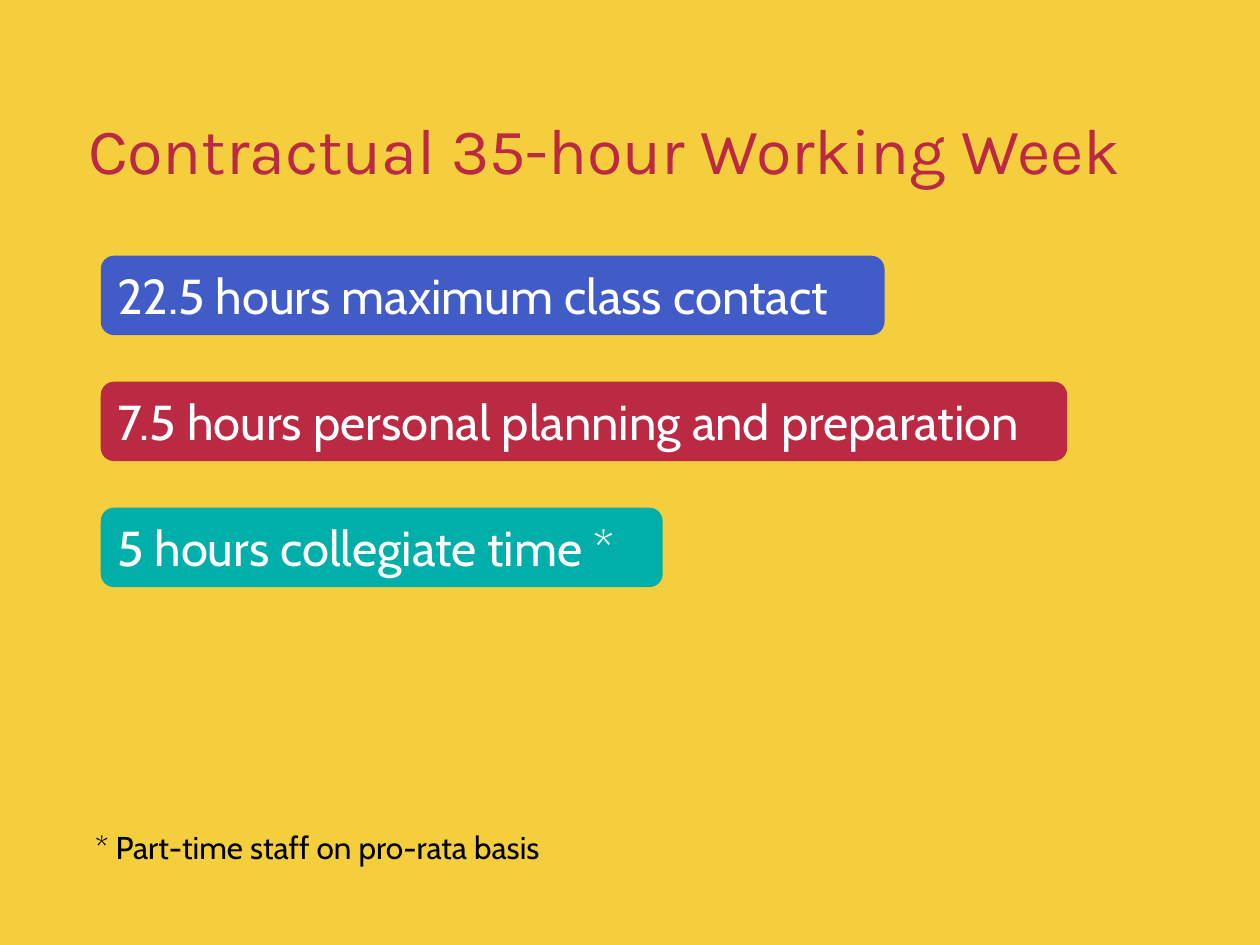
"""Build the slide on the contractual 35-hour working week."""
from pptx import Presentation
from pptx.dml.color import RGBColor
from pptx.enum.shapes import MSO_SHAPE as SHAPE
from pptx.enum.text import MSO_ANCHOR as ANCHOR, MSO_AUTO_SIZE as AUTO, PP_ALIGN as ALIGN
from pptx.util import Inches, Pt

YELLOW = RGBColor(0xF5, 0xCE, 0x3E)
RED = RGBColor(0xBB, 0x29, 0x43)
BLUE = RGBColor(0x42, 0x5C, 0xC7)
TEAL = RGBColor(0x00, 0xAF, 0xAA)
WHITE = RGBColor(0xFF, 0xFF, 0xFF)
BLACK = RGBColor(0x00, 0x00, 0x00)

MARGIN = 0.6
BAR_LEFT, BAR_TOP, BAR_HEIGHT, ROW_STEP = 0.8, 2.03, 0.63, 1
BARS = [
    ("22.5 hours maximum class contact", 6.22, BLUE),
    ("7.5 hours personal planning and preparation", 7.67, RED),
    ("5 hours collegiate time *", 4.46, TEAL),
]


def write(sp, text, font, size, color, anchor=ANCHOR.TOP):
    """Fill a shape with one left-aligned paragraph and return it."""
    tf = sp.text_frame
    tf.word_wrap = True
    tf.vertical_anchor = anchor
    p = tf.paragraphs[0]
    p.text = text
    p.alignment = ALIGN.LEFT
    p.font.name, p.font.size = font, Pt(size)
    p.font.color.rgb = color
    return p


def add_text(s, box, *style):
    """Add a text box at a left, top, width and height in inches."""
    sp = s.shapes.add_textbox(*map(Inches, box))
    return write(sp, *style)


def add_bar(s, row, text, width, color):
    """Add a rounded bar on the given row."""
    box = BAR_LEFT, BAR_TOP + row * ROW_STEP, width, BAR_HEIGHT
    sp = s.shapes.add_shape(SHAPE.ROUNDED_RECTANGLE, *map(Inches, box))
    sp.shadow.inherit = False
    sp.fill.solid()
    sp.fill.fore_color.rgb = color
    sp.line.fill.background()
    write(sp, text, "Cabin", 28, WHITE)
    sp.text_frame.auto_size = AUTO.SHAPE_TO_FIT_TEXT


def main():
    """Build and save the slide."""
    prs = Presentation()
    prs.slide_width, prs.slide_height = Inches(10), Inches(7.5)
    s = prs.slides.add_slide(prs.slide_layouts[6])
    s.background.fill.solid()
    s.background.fill.fore_color.rgb = YELLOW

    title = add_text(s, (MARGIN, 0.85, 8.62, 0.74), "Contractual 35-hour Working Week",
                     "Karla", 37, RED, ANCHOR.MIDDLE)
    title.line_spacing = 0.9
    for row, bar in enumerate(BARS):
        add_bar(s, row, *bar)
    add_text(s, (MARGIN, 6.52, 5, 0.4), " * Part-time staff on pro-rata basis",
             "Cabin", 18, BLACK)
    prs.save("out.pptx")


if __name__ == "__main__":
    main()
